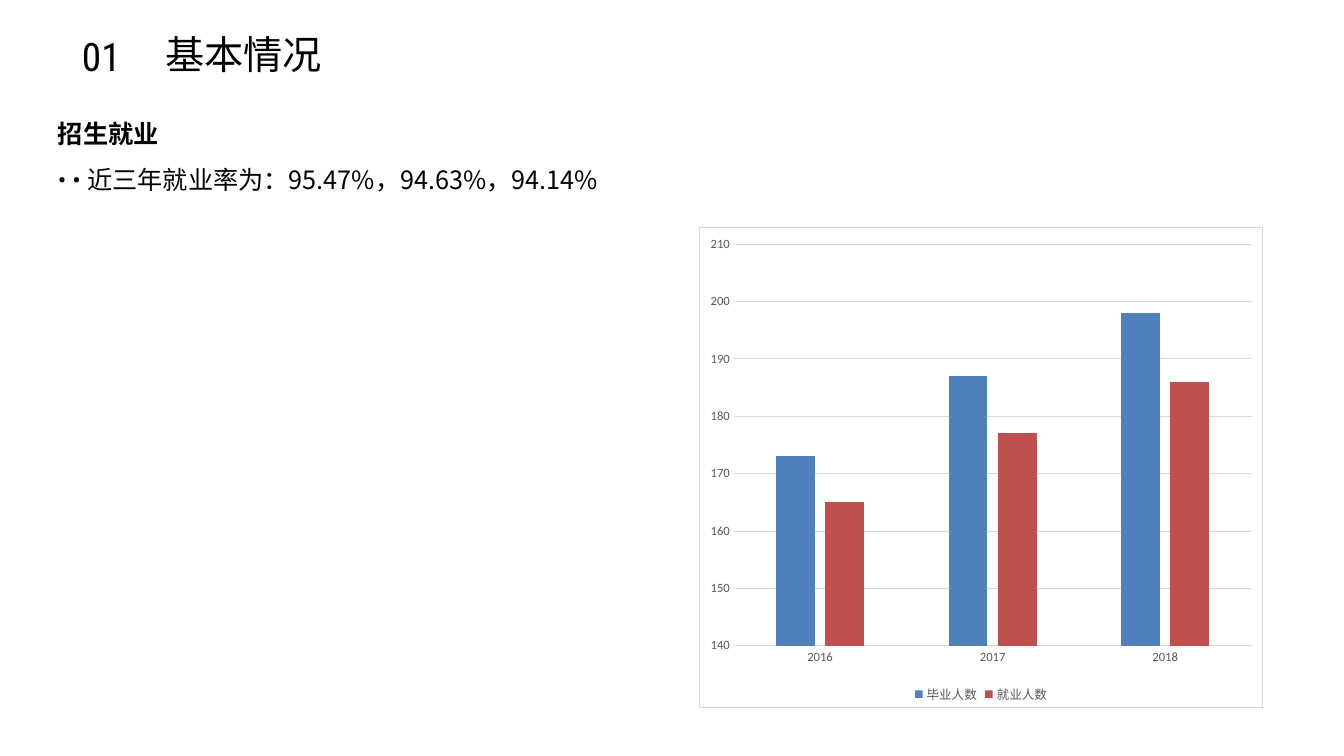
import pptx
import pptx.chart.data
import pptx.dml.color
import pptx.enum.chart
import pptx.enum.text
import pptx.oxml
import pptx.oxml.ns
import pptx.util
from lxml import etree

WIDTH, HEIGHT = 13.33, 7.5
COLORS = {
    "background": "FFFFFF",
    "text": "000000",
    "label": "595959",
    "rule": "D9D9D9",
    "graduates": "4F81BD",
    "employed": "C0504D",
}
CJK = "Noto Sans CJK SC"

# Each text: left, top, width, height as shares of the slide; size, line pitch, bold, runs
NUMBER = ((0.061, 0.047, 0.062, 0.136), 28, 31.4, False, [("01", "Roboto Condensed")])
TITLE = ((0.123, 0.051, 0.161, 0.129), 28, 27.9, False, [("基本情况", CJK)])
HEADING = ((0.043, 0.153, 0.104, 0.093), 18, 23.8, True, [("招生就业", CJK)])
RATES = ((0.043, 0.213, 0.536, 0.044), 18, 23.8, False,
         [("• • ", "Roboto"), ("近三年就业率为：95.47%，94.63%，94.14%", CJK)])

CHART_BOX = (0.52, 0.3, 0.42, 0.636)
YEARS = ["2016", "2017", "2018"]
SERIES = [
    ("毕业人数", (173, 187, 198), "graduates"),
    ("就业人数", (165, 177, 186), "employed"),
]


def rgb(name):
    return pptx.dml.color.RGBColor.from_string(COLORS[name])


def place(box):
    """Turn shares of the slide into lengths."""
    return [pptx.util.Inches(share * side)
            for share, side in zip(box, (WIDTH, HEIGHT, WIDTH, HEIGHT))]


def write(shape, content):
    """Position a text shape and fill its single paragraph run by run."""
    box, size, pitch, bold, runs = content
    shape.left, shape.top, shape.width, shape.height = place(box)
    frame = shape.text_frame
    frame.word_wrap = True
    frame.auto_size = pptx.enum.text.MSO_AUTO_SIZE.NONE
    frame.vertical_anchor = pptx.enum.text.MSO_ANCHOR.TOP
    frame.margin_left = frame.margin_right = frame.margin_top = frame.margin_bottom = 0
    paragraph = frame.paragraphs[0]
    paragraph.alignment = pptx.enum.text.PP_ALIGN.LEFT
    paragraph.line_spacing = pptx.util.Pt(pitch)
    for text, font_name in runs:
        run = paragraph.add_run()
        run.text = text
        run.font.name = font_name
        run.font.size = pptx.util.Pt(size)
        run.font.bold = bold
        run.font.color.rgb = rgb("text")
        east_asian = etree.SubElement(run.font._element, pptx.oxml.ns.qn("a:ea"))
        east_asian.set("typeface", font_name)


def style_font(font):
    font.name = "Calibri"
    font.size = pptx.util.Pt(9)
    font.color.rgb = rgb("label")


def style_rule(line):
    line.color.rgb = rgb("rule")
    line.width = pptx.util.Pt(0.75)


def frame_chart(chart):
    """Give the chart area a fill and a thin border."""
    properties = pptx.oxml.parse_xml(
        f'<c:spPr {pptx.oxml.ns.nsdecls("c", "a")}>'
        f'<a:solidFill><a:srgbClr val="{COLORS["background"]}"/></a:solidFill>'
        f'<a:ln w="9525"><a:solidFill><a:srgbClr val="{COLORS["rule"]}"/></a:solidFill></a:ln>'
        '</c:spPr>')
    chart._chartSpace.chart.addnext(properties)


def add_employment_chart(slide):
    data = pptx.chart.data.CategoryChartData()
    data.categories = YEARS
    for name, values, _ in SERIES:
        data.add_series(name, values)
    chart = slide.shapes.add_chart(
        pptx.enum.chart.XL_CHART_TYPE.COLUMN_CLUSTERED, *place(CHART_BOX), data).chart
    chart.font.name = "Calibri"
    chart.font.size = pptx.util.Pt(10)
    chart.has_title = False
    frame_chart(chart)

    plot = chart.plots[0]
    plot.vary_by_categories = False
    plot.gap_width, plot.overlap = 219, -27
    for series, (_, _, color) in zip(plot.series, SERIES):
        series.format.fill.solid()
        series.format.fill.fore_color.rgb = rgb(color)

    for axis in (chart.category_axis, chart.value_axis):
        axis.major_tick_mark = axis.minor_tick_mark = pptx.enum.chart.XL_TICK_MARK.NONE
        style_font(axis.tick_labels.font)
    style_rule(chart.category_axis.format.line)
    values = chart.value_axis
    values.minimum_scale, values.maximum_scale, values.major_unit = 140, 210, 10
    values.format.line.fill.background()
    style_rule(values.major_gridlines.format.line)

    chart.has_legend = True
    chart.legend.position = pptx.enum.chart.XL_LEGEND_POSITION.BOTTOM
    chart.legend.include_in_layout = False
    style_font(chart.legend.font)


def main():
    presentation = pptx.Presentation()
    presentation.slide_width = pptx.util.Inches(WIDTH)
    presentation.slide_height = pptx.util.Inches(HEIGHT)
    slide = presentation.slides.add_slide(presentation.slide_layouts[5])
    slide.background.fill.solid()
    slide.background.fill.fore_color.rgb = rgb("background")
    write(slide.shapes.title, TITLE)
    for content in (NUMBER, HEADING, RATES):
        write(slide.shapes.add_textbox(*place(content[0])), content)
    add_employment_chart(slide)
    presentation.save("out.pptx")


if __name__ == "__main__":
    main()
